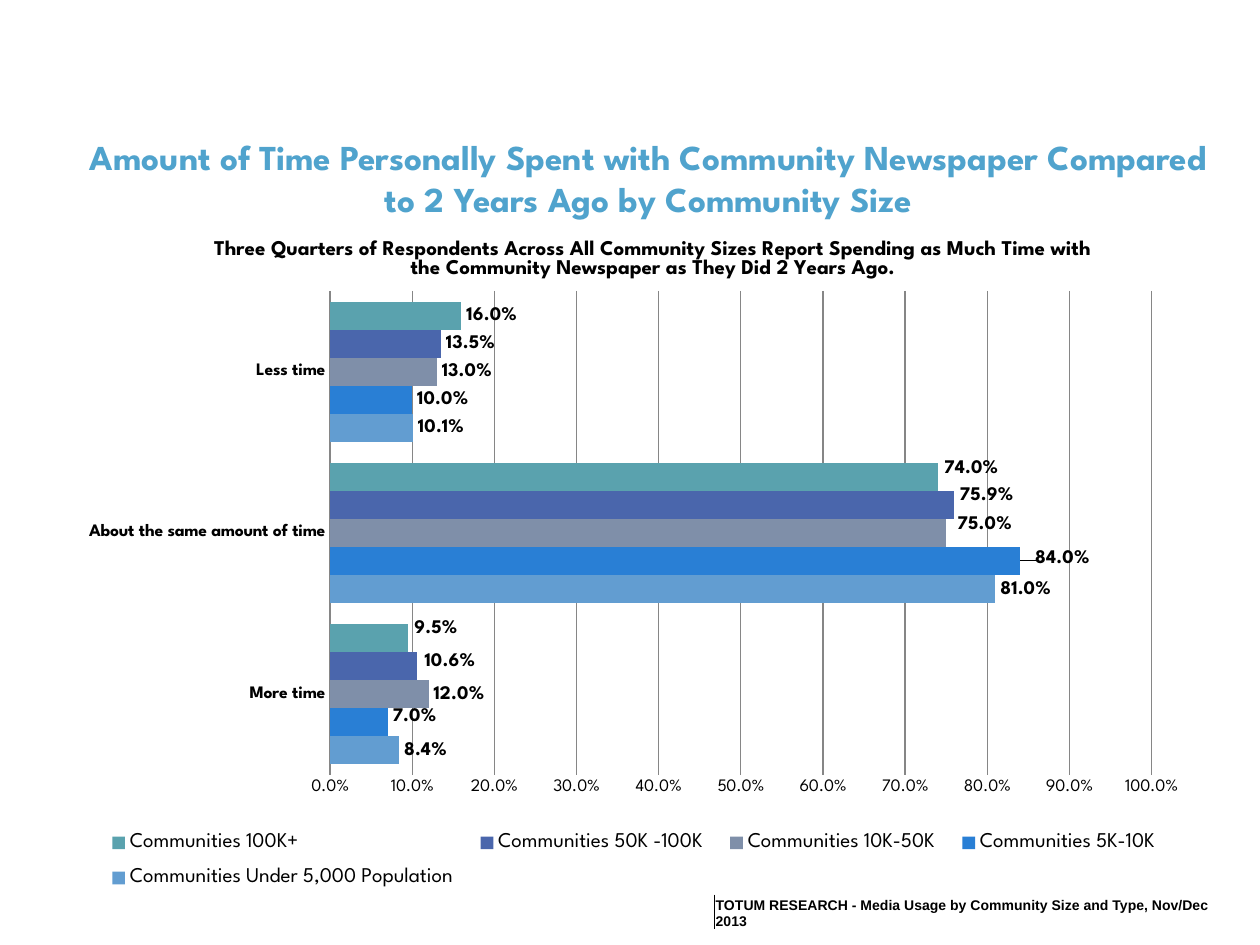
from lxml import etree
from pptx import Presentation
from pptx import util as u
from pptx.chart.data import CategoryChartData
from pptx.dml.color import RGBColor
from pptx.enum import chart as ch
from pptx.enum import text
from pptx.oxml import parse_xml
from pptx.oxml.ns import nsdecls, qn

BLACK = RGBColor(0, 0, 0)
GRID_GRAY = RGBColor(0x86, 0x86, 0x86)
HEADING_BLUE = RGBColor(0x50, 0xA3, 0xCD)
HEADING_FONT = "League Spartan"
SOURCE_FONT = "Arial"
PERCENT = "0.0\\%"
CHART_WIDTH, CHART_HEIGHT = 8.94, 5.92

HEADING = ("Amount of Time Personally Spent with Community Newspaper "
           "Compared to 2 Years Ago by Community Size")
FINDING = ("Three Quarters of Respondents Across All Community Sizes Report Spending "
           "as Much Time with the Community Newspaper as They Did 2 Years Ago.")
SOURCE = "TOTUM RESEARCH - Media Usage by Community Size and Type, Nov/Dec 2013"
ANSWERS = ("More time", "About the same amount of time", "Less time")

# name, values, colour, label shifts in inches by answer index
COMMUNITIES = (
    ("Communities Under 5,000 Population", (8.4, 81, 10.1),
     RGBColor(0x62, 0x9D, 0xD1), {}),
    ("Communities 5K-10K", (7, 84, 10),
     RGBColor(0x29, 0x7F, 0xD5), {0: (0, -0.05), 1: (0.08, -0.02)}),
    ("Communities 10K-50K", (12, 75, 13),
     RGBColor(0x7F, 0x8F, 0xA9), {1: (0.05, -0.07)}),
    ("Communities 50K -100K", (10.6, 75.9, 13.5),
     RGBColor(0x4A, 0x66, 0xAC), {0: (0.02, -0.04), 1: (0.01, -0.08)}),
    ("Communities 100K+", (9.5, 74, 16),
     RGBColor(0x5A, 0xA2, 0xAE), {0: (0.01, -0.08), 1: (0.01, -0.07)}),
)


def style_font(font, size, bold=False, color=BLACK, name=HEADING_FONT):
    font.name = name
    font.size = u.Pt(size)
    font.bold = bold
    font.color.rgb = color


def place_after(anchor, x, y, width=None, height=None, edge=False, inner=False):
    """Put a manual chart layout, given in inches, after the anchor element."""
    for old in anchor.getparent().findall(qn("c:layout")):
        anchor.getparent().remove(old)
    layout = parse_xml(f"<c:layout {nsdecls('c')}><c:manualLayout/></c:layout>")
    settings = []
    if inner:
        settings.append(("layoutTarget", "inner"))
    if edge:
        settings += [("xMode", "edge"), ("yMode", "edge")]
    settings += [("x", x / CHART_WIDTH), ("y", y / CHART_HEIGHT)]
    if width:
        settings += [("w", width / CHART_WIDTH), ("h", height / CHART_HEIGHT)]
    for tag, value in settings:
        etree.SubElement(layout[0], qn(f"c:{tag}")).set("val", str(value))
    anchor.addnext(layout)


def style_axes(chart):
    answers, share = chart.category_axis, chart.value_axis
    style_font(answers.tick_labels.font, 10, bold=True)
    style_font(share.tick_labels.font, 10)
    share.minimum_scale, share.maximum_scale, share.major_unit = 0, 100, 10
    share.tick_labels.number_format = PERCENT
    share.tick_labels.number_format_is_linked = False
    share.has_major_gridlines = True
    share.format.line.fill.background()
    for axis in (answers, share):
        axis.major_tick_mark = axis.minor_tick_mark = ch.XL_TICK_MARK.NONE
    for line in (answers.format.line, share.major_gridlines.format.line):
        line.color.rgb = GRID_GRAY
        line.width = u.Pt(0.75)


def style_series(series, color, shifts):
    series.format.fill.solid()
    series.format.fill.fore_color.rgb = color
    series.invert_if_negative = False
    labels = series.data_labels
    labels.show_value = True
    labels.number_format = PERCENT
    labels.number_format_is_linked = False
    labels.position = ch.XL_LABEL_POSITION.OUTSIDE_END
    style_font(labels.font, 11, bold=True)
    for index, (x, y) in shifts.items():
        label = series.points[index].data_label
        style_font(label.font, 11, bold=True)
        label.position = ch.XL_LABEL_POSITION.OUTSIDE_END
        for entry in labels._element.findall(qn("c:dLbl")):
            if entry.find(qn("c:idx")).get("val") == str(index):
                place_after(entry.find(qn("c:idx")), x, y)


def add_time_chart(slide):
    data = CategoryChartData(number_format=PERCENT)
    data.categories = ANSWERS
    for name, values, _, _ in COMMUNITIES:
        data.add_series(name, values)
    chart = slide.shapes.add_chart(
        ch.XL_CHART_TYPE.BAR_CLUSTERED, u.Inches(0.53), u.Inches(1.43),
        u.Inches(CHART_WIDTH), u.Inches(CHART_HEIGHT), data).chart
    style_font(chart.font, 10)

    finding = chart.chart_title.text_frame.paragraphs[0]
    finding.alignment = text.PP_ALIGN.CENTER
    run = finding.add_run()
    run.text = FINDING
    style_font(run.font, 12, bold=True)
    title = chart.chart_title._element
    chart.chart_title.include_in_layout = False
    place_after(title.find(qn("c:tx")), 1.14, 0.43, edge=True)

    chart.has_legend = True
    chart.legend.position = ch.XL_LEGEND_POSITION.BOTTOM
    chart.legend.include_in_layout = False
    style_font(chart.legend.font, 12)
    place_after(chart.legend._element.find(qn("c:legendPos")),
                0.2, 5.06, 8.6, 0.68, edge=True)

    plot = chart.plots[0]
    plot.gap_width = 75
    plot.vary_by_categories = False
    for series, (_, _, color, shifts) in zip(plot.series, COMMUNITIES):
        style_series(series, color, shifts)
    style_axes(chart)

    area = chart._chartSpace.chart.plotArea
    if area.find(qn("c:layout")) is None:
        area.insert(0, parse_xml(f"<c:layout {nsdecls('c')}/>"))
    marker = etree.Element("marker")
    area.insert(0, marker)
    place_after(marker, 2.09, 0.88, 6.52, 3.84, edge=True, inner=True)
    area.remove(marker)


def add_heading(slide):
    frame = slide.shapes.add_textbox(
        u.Inches(0.53), u.Inches(1.03), u.Inches(9.24), u.Inches(0.77)).text_frame
    frame.word_wrap = True
    frame.auto_size = text.MSO_AUTO_SIZE.SHAPE_TO_FIT_TEXT
    paragraph = frame.paragraphs[0]
    paragraph.alignment = text.PP_ALIGN.CENTER
    run = paragraph.add_run()
    run.text = HEADING
    style_font(run.font, 20, bold=True, color=HEADING_BLUE)


def add_source_table(slide):
    table = slide.shapes.add_table(
        1, 1, u.Inches(5.67), u.Inches(7.1), u.Inches(4.21), u.Inches(0.18)).table
    table.first_row = table.horz_banding = False
    cell = table.cell(0, 0)
    cell.margin_left = cell.margin_top = cell.margin_right = u.Inches(0.01)
    cell.margin_bottom = 0
    cell.vertical_anchor = text.MSO_ANCHOR.BOTTOM
    run = cell.text_frame.paragraphs[0].add_run()
    run.text = SOURCE
    style_font(run.font, 8, bold=True, name=SOURCE_FONT)
    cell.fill.background()
    properties = cell._tc.get_or_add_tcPr()
    solid = f'<a:solidFill><a:srgbClr val="{BLACK}"/></a:solidFill>'
    borders = (("lnL", solid), ("lnR", "<a:noFill/>"),
               ("lnT", "<a:noFill/>"), ("lnB", "<a:noFill/>"))
    for index, (side, fill) in enumerate(borders):
        properties.insert(index, parse_xml(
            f'<a:{side} {nsdecls("a")} w="{u.Pt(0.5)}">{fill}</a:{side}>'))


def main():
    deck = Presentation()
    deck.slide_width, deck.slide_height = u.Inches(10), u.Inches(7.5)
    slide = deck.slides.add_slide(deck.slide_layouts[6])
    add_time_chart(slide)
    add_heading(slide)
    add_source_table(slide)
    deck.save("out.pptx")


if __name__ == "__main__":
    main()
